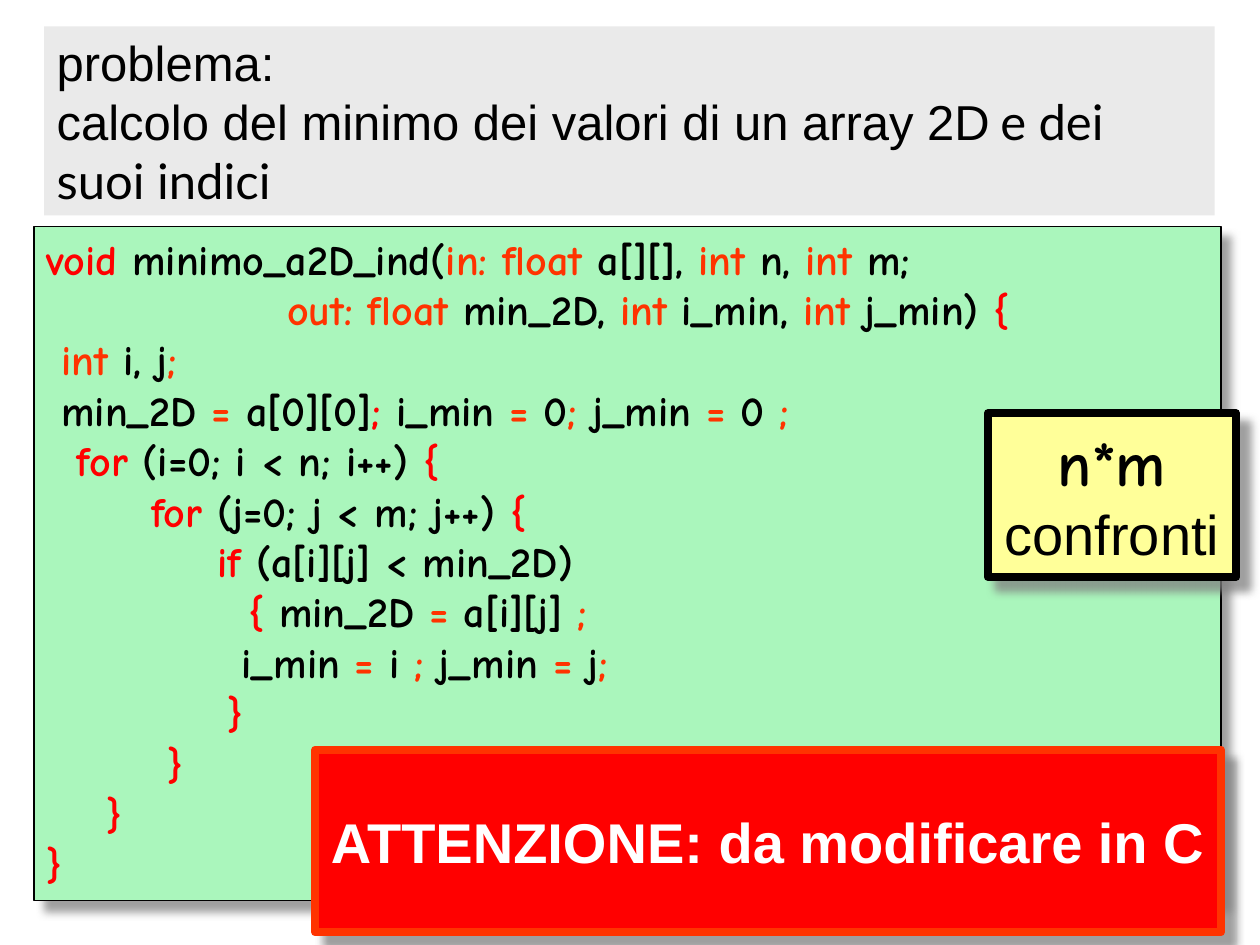
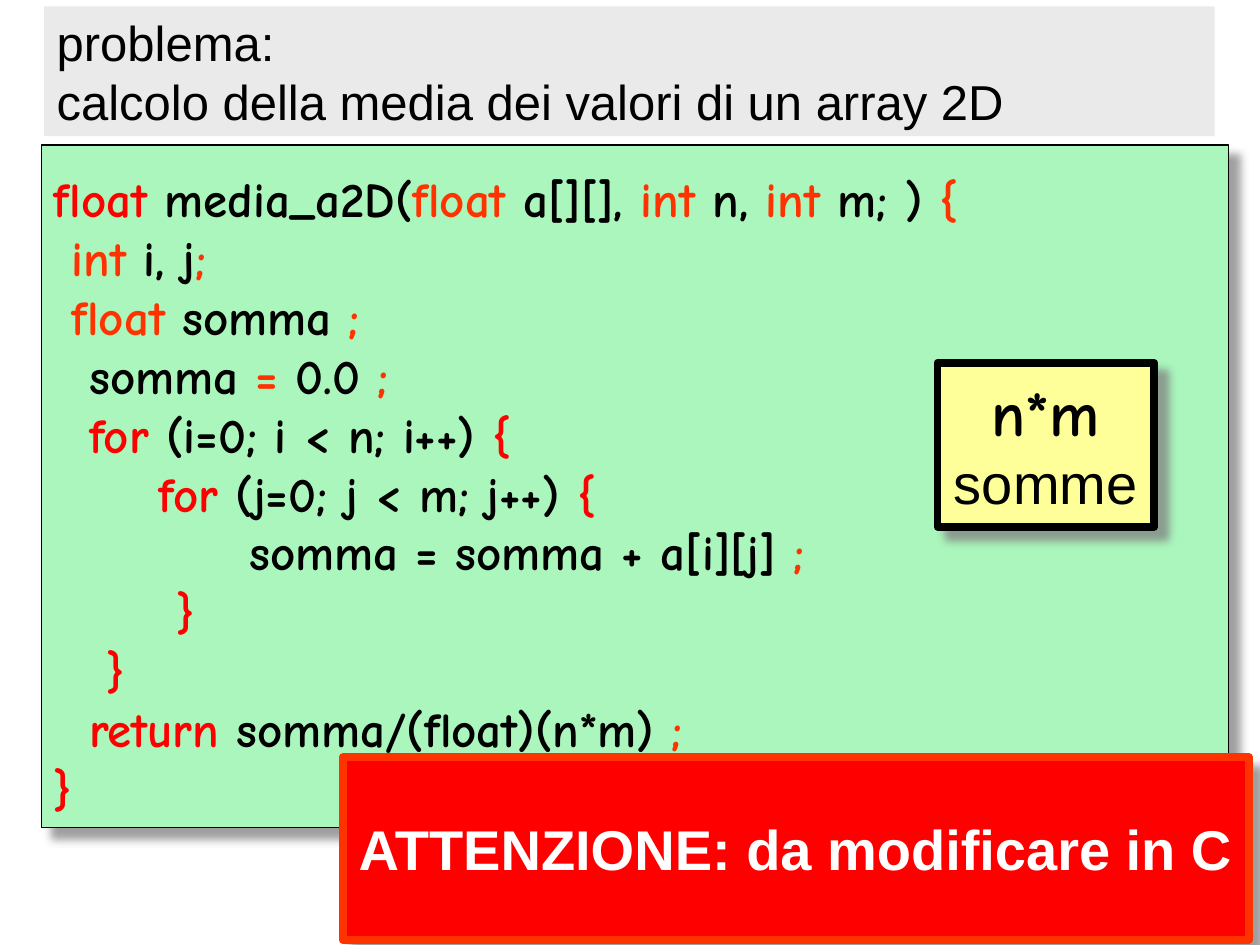
"""Build two slides with pseudocode for the minimum and the mean of a 2D array."""
from lxml import etree
from pptx import Presentation
from pptx.dml.color import RGBColor
from pptx.enum.shapes import MSO_SHAPE
from pptx.enum.text import MSO_ANCHOR, MSO_AUTO_SIZE, PP_ALIGN
from pptx.oxml.ns import qn
from pptx.util import Inches, Pt

RECTANGLE = MSO_SHAPE.RECTANGLE
TOP, MIDDLE = MSO_ANCHOR.TOP, MSO_ANCHOR.MIDDLE
LEFT, CENTER = PP_ALIGN.LEFT, PP_ALIGN.CENTER
FIXED_SIZE = MSO_AUTO_SIZE.NONE

BLACK, WHITE, RED, ORANGE = "000000", "FFFFFF", "FF0000", "FF3300"
GRAY, GREEN, YELLOW, SHADOW = "EAEAEA", "AAF6BC", "FFFF99", "808080"
SANS, CODE, ACCENT = "Arial", "Comic Neue", "Lato"
TITLE_LEFT, TITLE_WIDTH = 0.35, 9.29
CODE_WIDTH = 9.42
COST_HEIGHT = 1.3
WARNING_SIZE = (7.19, 1.45)
WARNING = "ATTENZIONE: da modificare in C"

MINIMUM_CODE = [
    (0, [("void", RED), (" minimo_a2D_ind(", BLACK), ("in: float", ORANGE),
         (" a[][], ", BLACK), ("int ", ORANGE), ("n, ", BLACK), ("int ", ORANGE),
         ("m;", BLACK)]),
    (1.91, [("out: float ", ORANGE), ("min_2D, ", BLACK), ("int ", ORANGE),
            ("i_min, ", BLACK), ("int ", ORANGE), ("j_min) ", BLACK), ("{", RED)]),
    (0.12, [("int", ORANGE), (" i, j", BLACK), (";", ORANGE)]),
    (0.12, [("min_2D ", BLACK), ("=", ORANGE), (" a[0][0]", BLACK), ("; ", RED),
            ("i_min ", BLACK), ("=", ORANGE), (" 0", BLACK), ("; ", ORANGE),
            ("j_min ", BLACK), ("=", ORANGE), (" 0", BLACK), (" ;", ORANGE)]),
    (0.24, [("for ", RED), ("(i=0; i < n; i++) ", BLACK), ("{", RED)]),
    (0.83, [("for ", RED), ("(j=0; j < m; j++) ", BLACK), ("{", RED)]),
    (1.36, [("if ", RED), ("(a[i][j] < min_2D)", BLACK)]),
    (1.6, [("{ ", RED), ("min_2D ", BLACK), ("= ", ORANGE), ("a[i][j] ", BLACK),
           (";", ORANGE)]),
    (1.55, [("i_min ", BLACK), ("=", ORANGE), (" i ", BLACK), ("; ", ORANGE),
            ("j_min ", BLACK), ("=", ORANGE), (" j", BLACK), (";", ORANGE)]),
    (1.44, [("}", RED)]),
    (0.96, [("}", RED)]),
    (0.48, [("}", RED)]),
    (0, [("}", RED)]),
]
MEAN_CODE = [
    (0, [("float", RED), (" media_a2D(", BLACK), ("float", ORANGE),
         (" a[][], ", BLACK), ("int ", ORANGE), ("n, ", BLACK), ("int ", ORANGE),
         ("m; ) ", BLACK), ("{", ORANGE)]),
    (0.14, [("int", ORANGE), (" i, j", BLACK), (";", ORANGE)]),
    (0.14, [("float ", ORANGE), ("somma", BLACK), (" ;", ORANGE)]),
    (0.28, [("somma ", BLACK), ("=", ORANGE), (" 0.0", BLACK), (" ;", ORANGE)]),
    (0.28, [("for ", RED), ("(i=0; i < n; i++) ", BLACK), ("{", RED)]),
    (0.83, [("for ", RED), ("(j=0; j < m; j++) ", BLACK), ("{", RED)]),
    (1.55, [("somma = somma + a[i][j]", BLACK), (" ;", ORANGE)]),
    (0.97, [("}", RED)]),
    (0.42, [("}", RED)]),
    (0.28, [("return ", RED), ("somma/(float)(n*m)", BLACK), (" ;", ORANGE)]),
    (0, [("}", RED)]),
]
SLIDES = [
    {"title": "calcolo del minimo dei valori di un array 2D",
     "title_end": [(" ", 24), ("e dei suoi indici", 28)],
     "title_top": 0.21, "title_height": 1.5,
     "code": MINIMUM_CODE, "code_size": 24, "code_inset": 0.05,
     "code_at": (0.27, 1.8), "code_height": 5.35,
     "cost": "confronti", "cost_at": (7.84, 3.28), "cost_width": 1.97,
     "warning_at": (2.5, 5.95)},
    {"title": "calcolo della media dei valori di un array 2D", "title_end": [],
     "title_top": 0.05, "title_height": 1.03,
     "code": MEAN_CODE, "code_size": 28, "code_inset": 0.19,
     "code_at": (0.33, 1.15), "code_height": 5.42,
     "cost": "somme", "cost_at": (7.44, 2.88), "cost_width": 1.72,
     "warning_at": (2.72, 6.01)},
]


def color(value):
    return RGBColor.from_string(value)


def set_fill(shape, value):
    shape.fill.solid()
    shape.fill.fore_color.rgb = color(value)


def set_font(font, name, size, value=BLACK, bold=False):
    font.name, font.size, font.bold = name, Pt(size), bold
    font.color.rgb = color(value)


def next_paragraph(frame, number, alignment):
    paragraph = frame.add_paragraph() if number else frame.paragraphs[0]
    paragraph.alignment = alignment
    return paragraph


def add_shadow(shape):
    shape.shadow.inherit = False
    effects = shape._element.spPr.find(qn("a:effectLst"))
    outer = etree.SubElement(effects, qn("a:outerShdw"), blurRad=str(Pt(5)),
                             dist=str(Pt(8.5)), dir=str(45 * 60000),
                             algn="ctr", rotWithShape="0")
    shade = etree.SubElement(outer, qn("a:srgbClr"), val=SHADOW)
    etree.SubElement(shade, qn("a:alpha"), val="75000")


def add_box(slide, position, size, fill, line, line_width, wrap, anchor):
    shape = slide.shapes.add_shape(RECTANGLE, *map(Inches, position + size))
    set_fill(shape, fill)
    shape.line.color.rgb = color(line)
    shape.line.width = Pt(line_width)
    add_shadow(shape)
    frame = shape.text_frame
    frame.word_wrap = wrap
    frame.vertical_anchor = anchor
    return frame


def add_title(slide, content):
    title = slide.shapes.title
    title.left, title.top = Inches(TITLE_LEFT), Inches(content["title_top"])
    title.width, title.height = Inches(TITLE_WIDTH), Inches(content["title_height"])
    set_fill(title, GRAY)
    frame = title.text_frame
    frame.word_wrap, frame.auto_size = True, FIXED_SIZE
    frame.vertical_anchor = TOP
    for number, text in enumerate(("problema:", content["title"])):
        paragraph = next_paragraph(frame, number, LEFT)
        set_font(paragraph.font, SANS, 28)
        paragraph.add_run().text = text
    for text, size in content["title_end"]:
        run = paragraph.add_run()
        run.text = text
        set_font(run.font, ACCENT, size)


def add_code(slide, content):
    frame = add_box(slide, content["code_at"], (CODE_WIDTH, content["code_height"]),
                    GREEN, BLACK, 0.75, True, TOP)
    frame.margin_top = Inches(content["code_inset"])
    for number, (indent, parts) in enumerate(content["code"]):
        paragraph = next_paragraph(frame, number, LEFT)
        paragraph._p.get_or_add_pPr().set("marL", str(Inches(indent)))
        set_font(paragraph.font, CODE, content["code_size"], bold=True)
        for text, value in parts:
            run = paragraph.add_run()
            run.text = text
            run.font.color.rgb = color(value)


def add_callout(slide, position, size, fill, line, rows):
    frame = add_box(slide, position, size, fill, line, 4.5, False, MIDDLE)
    for number, (text, *style) in enumerate(rows):
        paragraph = next_paragraph(frame, number, CENTER)
        paragraph.add_run().text = text
        set_font(paragraph.font, *style)


def main():
    presentation = Presentation()
    presentation.slide_width, presentation.slide_height = Inches(10), Inches(7.5)
    for content in SLIDES:
        slide = presentation.slides.add_slide(presentation.slide_layouts[5])
        add_title(slide, content)
        add_code(slide, content)
        add_callout(slide, content["cost_at"], (content["cost_width"], COST_HEIGHT),
                    YELLOW, BLACK, [("n*m", CODE, 36, BLACK, True),
                                    (content["cost"], SANS, 32, BLACK)])
        add_callout(slide, content["warning_at"], WARNING_SIZE, RED, ORANGE,
                    [(WARNING, SANS, 32, WHITE, True)])
    presentation.save("out.pptx")


if __name__ == "__main__":
    main()
